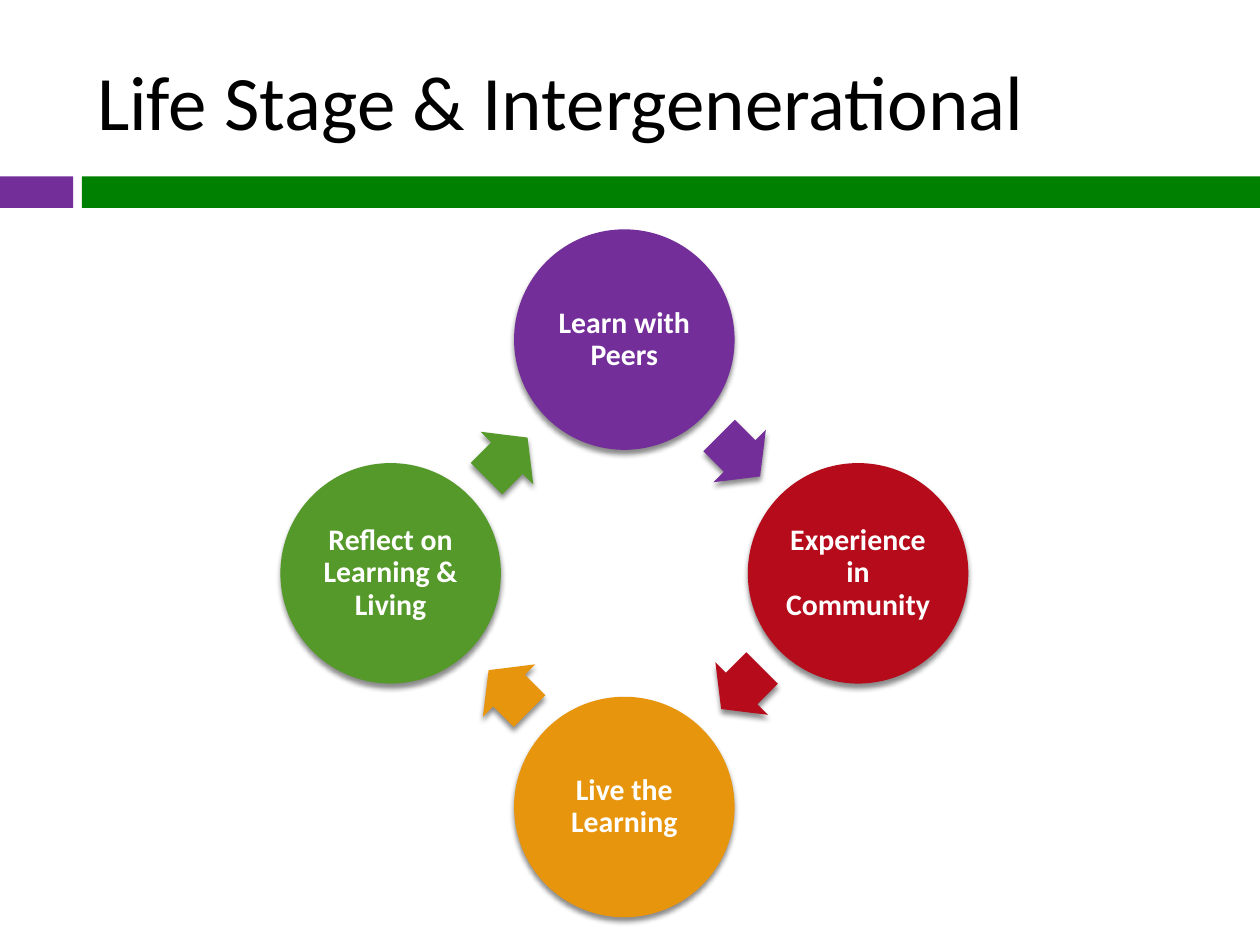
import math
import pptx
import pptx.util
import pptx.dml.color
import pptx.enum.shapes
import pptx.enum.text
import pptx.oxml

SHAPES = pptx.enum.shapes.MSO_SHAPE
ALIGN = pptx.enum.text.PP_ALIGN
MIDDLE = pptx.enum.text.MSO_ANCHOR.MIDDLE
SHADOW = (
    '<a:effectLst xmlns:a="http://schemas.openxmlformats.org/drawingml/2006/main">'
    '<a:outerShdw blurRad="38100" dist="30480" dir="5400000" rotWithShape="0">'
    '<a:srgbClr val="000000"><a:alpha val="45000"/></a:srgbClr>'
    '</a:outerShdw></a:effectLst>'
)

deck = pptx.Presentation()
deck.slide_width = pptx.util.Inches(10)
deck.slide_height = pptx.util.Inches(7.5)
unit = deck.slide_width / 100
page = deck.slides.add_slide(deck.slide_layouts[5])


def colour(value):
    return pptx.dml.color.RGBColor.from_string(value)


def add_filled(kind, left, top, width, height, fill):
    shape = page.shapes.add_shape(
        kind, *(round(share * unit) for share in (left, top, width, height)))
    shape.shadow.inherit = False
    shape.fill.solid()
    shape.fill.fore_color.rgb = colour(fill)
    shape.line.fill.background()
    return shape


bar_top, bar_height = 14, 2.5
for left, right, fill in ((0, 5.8, "732E9A"), (6.5, 100, "008000")):
    add_filled(SHAPES.RECTANGLE, left, bar_top, right - left, bar_height, fill)

title = page.shapes.title
title_place = {"left": 6.7, "top": 2.5, "width": 89.2, "height": 10.8}
for name, share in title_place.items():
    setattr(title, name, round(share * unit))
title.text_frame.text = "Life Stage & Intergenerational"
title.text_frame.vertical_anchor = MIDDLE
para = title.text_frame.paragraphs[0]
para.alignment = ALIGN.LEFT
title_font = {"name": "Calibri", "size": pptx.util.Pt(44), "bold": False}
for name, value in title_font.items():
    setattr(para.font, name, value)
para.font.color.rgb = colour("000000")

centre_x, centre_y, radius = 49.55, 45.5, 18.55
diameter = 17.5
arrow_radius, arrow_width, arrow_height = 13.05, 4.6, 5.9
margin = pptx.util.Inches(0.02)
frame_format = {"word_wrap": True, "vertical_anchor": MIDDLE}
frame_format.update({"margin_" + side: margin for side in ("left", "top", "right", "bottom")})
para_format = {"alignment": ALIGN.CENTER, "line_spacing": 0.9}
label_font = {"name": "Calibri", "size": pptx.util.Pt(17), "bold": True}

stages = (
    ("Learn with Peers", "732E9A"),
    ("Experience in Community", "B50B1B"),
    ("Live the Learning", "E8950E"),
    ("Reflect on Learning & Living", "55992B"),
)
for index, (label, fill) in enumerate(stages):
    turn = index * 90
    angle = math.radians(turn)
    circle = add_filled(
        SHAPES.OVAL,
        centre_x + radius * math.sin(angle) - diameter / 2,
        centre_y - radius * math.cos(angle) - diameter / 2,
        diameter, diameter, fill)
    frame = circle.text_frame
    frame.text = label
    para = frame.paragraphs[0]
    for target, values in ((frame, frame_format), (para, para_format), (para.font, label_font)):
        for name, value in values.items():
            setattr(target, name, value)
    para.font.color.rgb = colour("FFFFFF")

    angle = math.radians(turn + 44.5)
    arrow = add_filled(
        SHAPES.RIGHT_ARROW,
        centre_x + arrow_radius * math.sin(angle) - arrow_width / 2,
        centre_y - arrow_radius * math.cos(angle) - arrow_height / 2,
        arrow_width, arrow_height, fill)
    arrow.rotation = turn + 45
    arrow.adjustments[0] = 0.6
    arrow.adjustments[1] = 0.5

    for shape in (circle, arrow):
        properties = shape._element.spPr
        effects = properties.find(pptx.oxml.ns.qn("a:effectLst"))
        properties.replace(effects, pptx.oxml.parse_xml(SHADOW))

deck.save("out.pptx")
